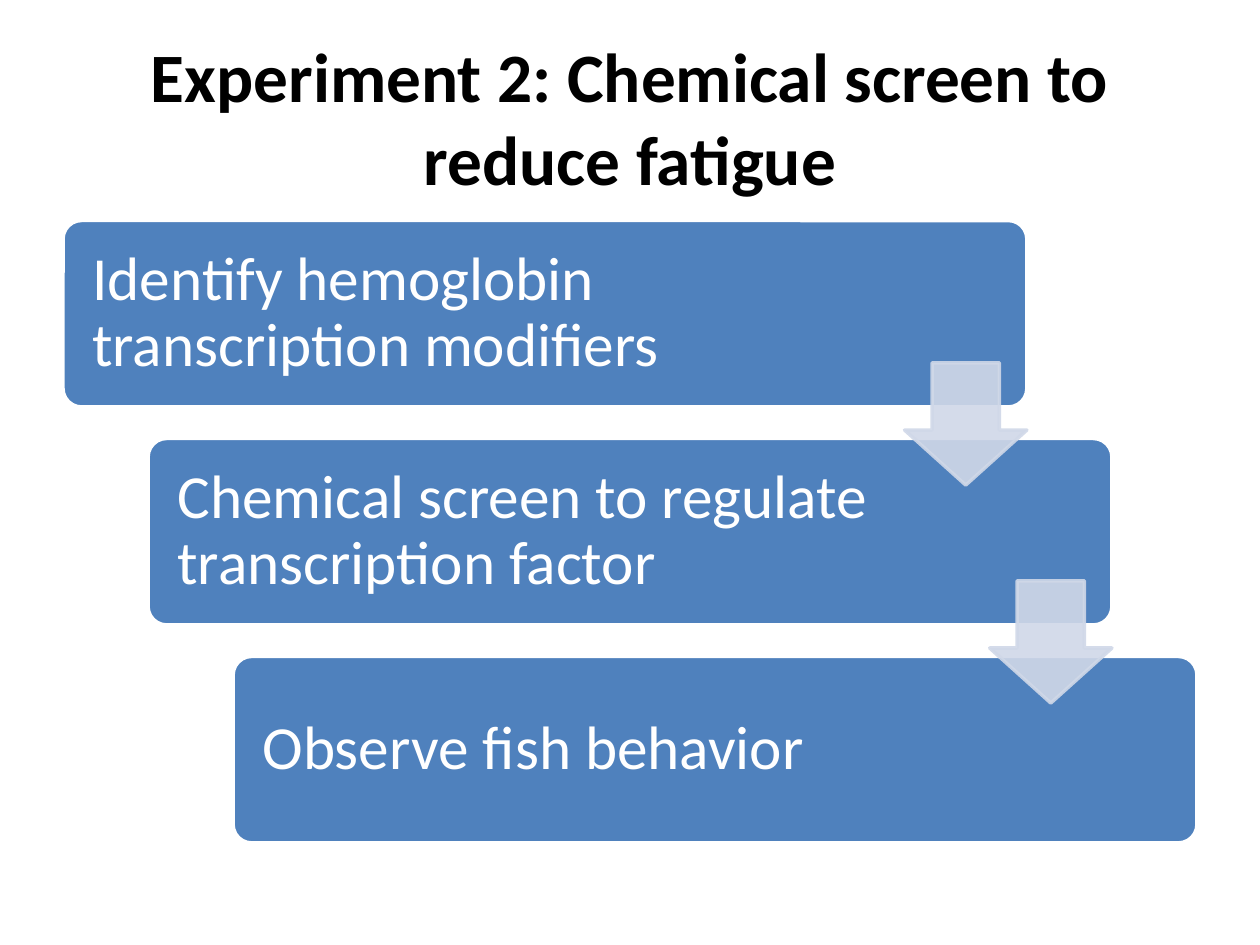
from lxml import etree
from pptx import Presentation
from pptx.dml.color import RGBColor
from pptx.enum import shapes, text
from pptx.oxml.ns import qn
from pptx.util import Inches, Pt

TITLE = "Experiment 2: Chemical screen to reduce fatigue"
STEPS = [
    "Identify hemoglobin transcription modifiers",
    "Chemical screen to regulate transcription factor",
    "Observe fish behavior",
]
COLORS = {"title": "000000", "step": "4F81BD", "white": "FFFFFF", "arrow": "D0D8E8"}
FONT = "Calibri"

# Staircase geometry, in inches
LEFT, TOP = 0.5, 1.75
STEP_W, STEP_H = 7.65, 1.48
SHIFT_X, SHIFT_Y = 0.675, 1.73
ARROW_SIZE = 0.97
ARROW_DX, ARROW_DY = STEP_W - ARROW_SIZE, 1.13


def style_run(run, size, color, bold=False):
    run.font.name = FONT
    run.font.size = Pt(size)
    run.font.bold = bold
    run.font.color.rgb = RGBColor.from_string(COLORS[color])


def add_box(slide, kind, left, top, width, height, fill, line, adjustments):
    box = slide.shapes.add_shape(
        kind, Inches(left), Inches(top), Inches(width), Inches(height))
    box.shadow.inherit = False
    for i, value in enumerate(adjustments):
        box.adjustments[i] = value
    box.fill.solid()
    box.fill.fore_color.rgb = RGBColor.from_string(COLORS[fill])
    box.line.color.rgb = RGBColor.from_string(COLORS[line])
    box.line.width = Pt(2)
    return box


def add_step(slide, label, left, top):
    step = add_box(slide, shapes.MSO_SHAPE.ROUNDED_RECTANGLE, left, top,
                   STEP_W, STEP_H, "step", "white", [0.1])
    frame = step.text_frame
    frame.word_wrap = True
    frame.vertical_anchor = text.MSO_ANCHOR.MIDDLE
    frame.margin_left = frame.margin_top = frame.margin_bottom = Inches(0.19)
    frame.margin_right = Inches(1.75)
    frame.text = label
    paragraph = frame.paragraphs[0]
    paragraph.alignment = text.PP_ALIGN.LEFT
    paragraph.line_spacing = 0.9
    style_run(paragraph.runs[0], 35, "white")


def add_arrow(slide, left, top):
    arrow = add_box(slide, shapes.MSO_SHAPE.DOWN_ARROW, left, top,
                    ARROW_SIZE, ARROW_SIZE, "arrow", "arrow", [0.55, 0.45])
    # 90% opacity on both fill and outline
    for color in arrow.element.spPr.iter(qn("a:srgbClr")):
        etree.SubElement(color, qn("a:alpha")).set("val", "90000")


def main():
    prs = Presentation()
    prs.slide_width, prs.slide_height = Inches(10), Inches(7.5)
    slide = prs.slides.add_slide(prs.slide_layouts[5])

    # Title
    title = slide.shapes.title
    title.left, title.top = Inches(0.5), Inches(0.3)
    title.width, title.height = Inches(9), Inches(1.25)
    title.text_frame.text = TITLE
    title.text_frame.word_wrap = True
    title.text_frame.vertical_anchor = text.MSO_ANCHOR.MIDDLE
    title.text_frame.paragraphs[0].alignment = text.PP_ALIGN.CENTER
    style_run(title.text_frame.paragraphs[0].runs[0], 39.6, "title", bold=True)

    # Steps, then the arrows that overlap them
    corners = [(LEFT + i * SHIFT_X, TOP + i * SHIFT_Y) for i in range(len(STEPS))]
    for label, (left, top) in zip(STEPS, corners):
        add_step(slide, label, left, top)
    for left, top in corners[:-1]:
        add_arrow(slide, left + ARROW_DX, top + ARROW_DY)

    prs.save("out.pptx")


if __name__ == "__main__":
    main()
